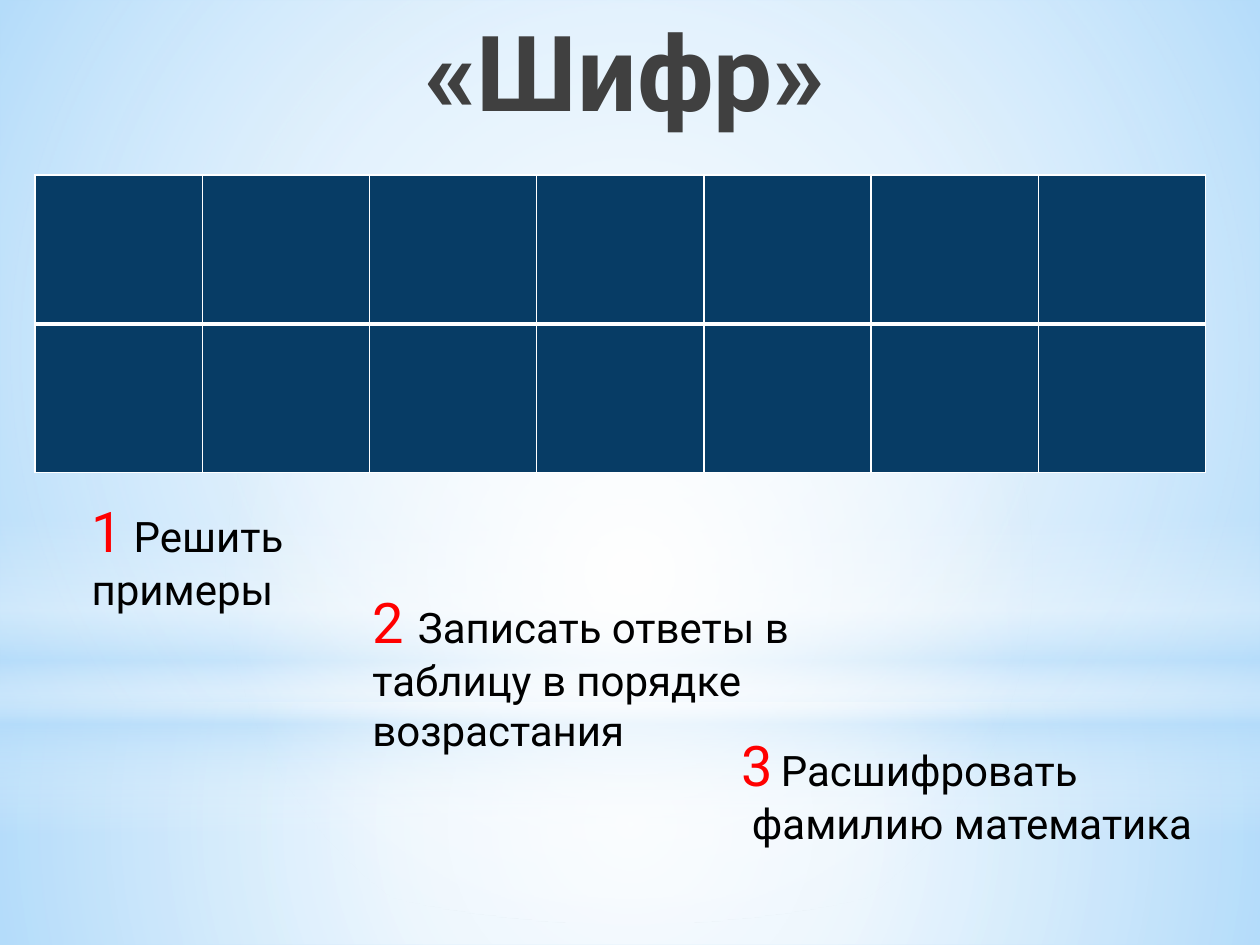
import pptx
import pptx.util
from lxml import etree
from pptx.dml.color import RGBColor
from pptx.enum.shapes import MSO_SHAPE
from pptx.enum.text import MSO_ANCHOR, MSO_AUTO_SIZE, PP_ALIGN
from pptx.oxml.ns import qn
from pptx.util import Cm, Pt

FONT = "Roboto"
SKY = RGBColor(0xB4, 0xDC, 0xFA)
WHITE = RGBColor(0xFF, 0xFF, 0xFF)
NAVY = RGBColor(0x07, 0x3C, 0x65)
GRAY = RGBColor(0x40, 0x40, 0x40)
RED = RGBColor(0xFF, 0x00, 0x00)
BLACK = RGBColor(0x00, 0x00, 0x00)

TITLE = "«Шифр»"
TITLE_BOX = (3.3, 0, 18.6, 3.73)
TITLE_FORMAT = {"size": Pt(60), "bold": True}

ROWS, COLS = 2, 7
TABLE_LEFT, TABLE_TOP = 0.71, 3.53
CELL_WIDTH, CELL_HEIGHT = 3.37, 3
THIN, THICK = 1, 3

NUMBER = ({"size": Pt(32)}, RED)
GAP = ({"size": Pt(18)}, BLACK)
WORDS = ({"size": Pt(24)}, BLACK)

# box in cm, wrap, alignment, paragraphs of (text, style) runs
STEPS = [
    ((1.6, 9.88, 7.8, 2.64), True, PP_ALIGN.LEFT,
     [[("1", NUMBER), (" Решить примеры", WORDS)]]),
    ((7.26, 11.71, 10.6, 3.68), True, PP_ALIGN.LEFT,
     [[("2 ", NUMBER),
       ("Записать ответы в таблицу в порядке возрастания", WORDS)]]),
    ((14.7, 14.6, 9.73, 2.64), False, PP_ALIGN.JUSTIFY,
     [[("3", NUMBER), (" ", GAP), ("Расшифровать", WORDS)],
      [(" фамилию математика", WORDS)]]),
]

# shape, box in cm, radial, stops of (position %, colour, opacity %)
GLOWS = [
    (MSO_SHAPE.RECTANGLE, (0, 14.17, 25.4, 4.88), True,
     [(0, WHITE, 91), (37, WHITE, 76), (100, SKY, 79)]),
    (MSO_SHAPE.RECTANGLE, (0, 0, 25.4, 14.17), True,
     [(0, WHITE, 89), (48, WHITE, 62), (100, SKY, 79)]),
    (MSO_SHAPE.RECTANGLE, (0, 10.46, 25.4, 6.35), False,
     [(0, WHITE, 0), (29, WHITE, 30), (45, SKY, 40), (55, WHITE, 26),
      (65, SKY, 60), (100, WHITE, 0)]),
    (MSO_SHAPE.OVAL, (0, 4.45, 25.4, 14.17), True,
     [(0, WHITE, 100), (56, WHITE, 0)]),
]


def cm_box(box):
    return [Cm(v) for v in box]


def child(parent, tag, **attrs):
    return etree.SubElement(parent, qn(tag), {k: str(v) for k, v in attrs.items()})


def add_run(p, text, formats, color):
    r = p.add_run()
    r.text = text
    for name, value in formats.items():
        setattr(r.font, name, value)
    r.font.name = FONT
    r.font.color.rgb = color


def add_glow(s, kind, box, radial, stops):
    sp = s.shapes.add_shape(kind, *cm_box(box))
    sp.shadow.inherit = False
    sp.line.fill.background()
    grad = etree.Element(qn("a:gradFill"), rotWithShape="1")
    stop_list = child(grad, "a:gsLst")
    for pos, color, opacity in stops:
        stop = child(stop_list, "a:gs", pos=pos * 1000)
        child(child(stop, "a:srgbClr", val=color), "a:alpha", val=opacity * 1000)
    if radial:
        center = child(grad, "a:path", path="circle")
        child(center, "a:fillToRect", l=50000, t=50000, r=50000, b=50000)
    else:
        child(grad, "a:lin", ang=90 * 60000, scaled=0)
    sp._element.spPr.insert(2, grad)  # right after the geometry


def set_borders(cell, widths):
    tc_pr = cell._tc.get_or_add_tcPr()
    for side, width in widths.items():
        ln = child(tc_pr, f"a:ln{side}", w=Pt(width))
        child(child(ln, "a:solidFill"), "a:srgbClr", val=WHITE)


def add_answer_table(s):
    box = (TABLE_LEFT, TABLE_TOP, COLS * CELL_WIDTH, ROWS * CELL_HEIGHT)
    table = s.shapes.add_table(ROWS, COLS, *cm_box(box)).table
    for column in table.columns:
        column.width = Cm(CELL_WIDTH)
    for i, row in enumerate(table.rows):
        row.height = Cm(CELL_HEIGHT)
        for cell in row.cells:
            set_borders(cell, {"L": THIN, "R": THIN,
                               "T": THICK if i else THIN,
                               "B": THIN if i else THICK})
            cell.fill.solid()
            cell.fill.fore_color.rgb = NAVY


def add_step(s, box, wrap, align, paragraphs):
    tf = s.shapes.add_textbox(*cm_box(box)).text_frame
    tf.word_wrap = wrap
    tf.auto_size = MSO_AUTO_SIZE.SHAPE_TO_FIT_TEXT
    for i, runs in enumerate(paragraphs):
        p = tf.add_paragraph() if i else tf.paragraphs[0]
        p.alignment = align
        for text, style in runs:
            add_run(p, text, *style)


def add_title(s):
    title = s.shapes.title
    title.left, title.top, title.width, title.height = cm_box(TITLE_BOX)
    s.shapes._spTree.append(title._element)  # in front of the glows
    tf = title.text_frame
    tf.vertical_anchor = MSO_ANCHOR.TOP
    p = tf.paragraphs[0]
    p.alignment = PP_ALIGN.CENTER
    add_run(p, TITLE, TITLE_FORMAT, GRAY)


def main():
    prs = pptx.Presentation()
    prs.slide_width, prs.slide_height = Cm(25.4), Cm(19.05)
    s = prs.slides.add_slide(prs.slide_layouts[5])
    s.background.fill.solid()
    s.background.fill.fore_color.rgb = SKY
    for glow in GLOWS:
        add_glow(s, *glow)
    add_title(s)
    add_answer_table(s)
    for step in STEPS:
        add_step(s, *step)
    prs.save("out.pptx")


if __name__ == "__main__":
    main()
